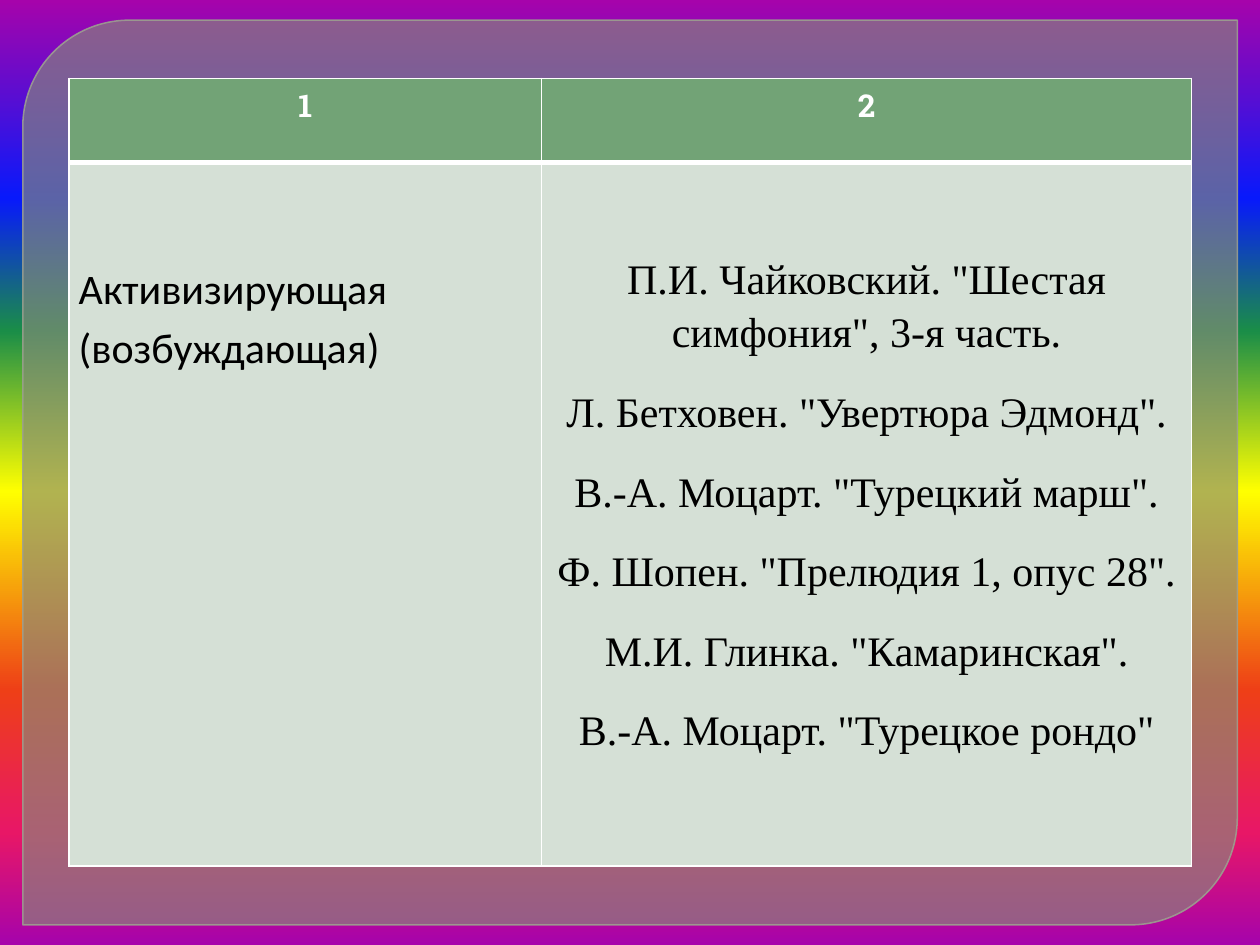
import pptx
import pptx.util
import pptx.dml.color
import pptx.enum.shapes
import pptx.enum.text
import pptx.oxml
import pptx.oxml.ns
import lxml.etree

Pt = pptx.util.Pt
qn = pptx.oxml.ns.qn
CENTER = pptx.enum.text.PP_ALIGN.CENTER
LEFT = pptx.enum.text.PP_ALIGN.LEFT

COLORS = {
    "panel": "888B7B",
    "panel_line": "9DA090",
    "header": "72A376",
    "body": "D5E0D6",
    "white": "FFFFFF",
    "black": "000000",
}
RAINBOW = [(0, "A603AB"), (21, "0819FB"), (35, "1A8D48"), (52, "FFFF00"),
           (73, "EE3F17"), (88, "E81766"), (100, "A603AB")]

HEADER_FONT = {"name": "Roboto Slab", "size": Pt(18), "bold": True}
TYPE_FONT = {"name": "Calibri", "size": Pt(24), "bold": False}
MUSIC_FONT = {"name": "Times New Roman", "size": Pt(24), "bold": False}
HEADER_PARAGRAPH = {"alignment": CENTER}
TYPE_PARAGRAPH = {"alignment": LEFT, "line_spacing": 1.15, "space_after": Pt(15)}
MUSIC_PARAGRAPH = {**TYPE_PARAGRAPH, "alignment": CENTER}

TYPE_TEXT = ["Активизирующая (возбуждающая)"]
MUSIC = [
    "П.И. Чайковский. \"Шестая симфония\", 3-я часть.",
    "Л. Бетховен. \"Увертюра Эдмонд\".",
    "В.-А. Моцарт. \"Турецкий марш\".",
    "Ф. Шопен. \"Прелюдия 1, опус 28\".",
    "М.И. Глинка. \"Камаринская\".",
    "В.-А. Моцарт. \"Турецкое рондо\"",
]


def rgb(name):
    return pptx.dml.color.RGBColor.from_string(COLORS[name])


def apply(target, values):
    for name, value in values.items():
        setattr(target, name, value)


def add_alpha(fill_element, percent):
    color = fill_element.find(qn("a:srgbClr"))
    lxml.etree.SubElement(color, qn("a:alpha"), val=str(percent * 1000))


def paint_background(slide):
    fill = slide.background.fill
    fill.gradient()
    gradient = next(slide.element.iter(qn("a:gradFill")))
    stops = gradient.find(qn("a:gsLst"))
    for stop in list(stops):
        stops.remove(stop)
    for position, color in RAINBOW:
        stop = lxml.etree.SubElement(stops, qn("a:gs"), pos=str(position * 1000))
        lxml.etree.SubElement(stop, qn("a:srgbClr"), val=color)
    gradient.find(qn("a:lin")).set("ang", "5400000")


def add_panel(slide, left, top, width, height):
    kind = pptx.enum.shapes.MSO_SHAPE.ROUND_2_DIAG_RECTANGLE
    panel = slide.shapes.add_shape(kind, Pt(left), Pt(top), Pt(width), Pt(height))
    panel.shadow.inherit = False
    panel.adjustments[0] = 0.118
    panel.adjustments[1] = 0
    panel.fill.solid()
    panel.fill.fore_color.rgb = rgb("panel")
    panel.line.color.rgb = rgb("panel_line")
    panel.line.width = Pt(0.87)
    properties = panel.element.spPr
    add_alpha(properties.find(qn("a:solidFill")), 65)
    add_alpha(properties.find(qn("a:ln")).find(qn("a:solidFill")), 88)


def set_borders(cell, widths):
    properties = cell._tc.get_or_add_tcPr()
    for index, (side, width) in enumerate(widths.items()):
        line = lxml.etree.Element(qn("a:ln" + side), w=str(int(Pt(width))))
        fill = lxml.etree.SubElement(line, qn("a:solidFill"))
        lxml.etree.SubElement(fill, qn("a:srgbClr"), val=COLORS["white"])
        properties.insert(index, line)


def fill_cell(cell, texts, color, fill, font, paragraph_format, margins, borders):
    cell.fill.solid()
    cell.fill.fore_color.rgb = rgb(fill)
    apply(cell, margins)
    set_borders(cell, borders)
    frame = cell.text_frame
    for index, text in enumerate(texts):
        paragraph = frame.add_paragraph() if index else frame.paragraphs[0]
        apply(paragraph, paragraph_format)
        run = paragraph.add_run()
        run.text = text
        apply(run.font, font)
        run.font.color.rgb = rgb(color)


def add_music_table(slide, left, top, width, height):
    header_height, type_width = 48.24, 270
    frame = slide.shapes.add_table(2, 2, Pt(left), Pt(top), Pt(width), Pt(height))
    table = frame.table
    table.columns[0].width = Pt(type_width)
    table.columns[1].width = Pt(width - type_width)
    table.rows[0].height = Pt(header_height)
    table.rows[1].height = Pt(height - header_height)

    header_borders = {"L": 1, "R": 1, "T": 1, "B": 3}
    body_borders = {"L": 1, "R": 1, "T": 3, "B": 1}
    for column, title in enumerate("12"):
        fill_cell(table.cell(0, column), [title], "white", "header",
                  HEADER_FONT, HEADER_PARAGRAPH, {}, header_borders)

    columns = [(TYPE_TEXT, TYPE_FONT, TYPE_PARAGRAPH, 54),
               (MUSIC, MUSIC_FONT, MUSIC_PARAGRAPH, 50)]
    for column, (texts, font, paragraph_format, margin_top) in enumerate(columns):
        margins = {"margin_left": Pt(5.5), "margin_right": Pt(5.5),
                   "margin_top": Pt(margin_top), "margin_bottom": Pt(5)}
        fill_cell(table.cell(1, column), texts, "black", "body",
                  font, paragraph_format, margins, body_borders)


def main():
    presentation = pptx.Presentation()
    presentation.slide_width = Pt(720)
    presentation.slide_height = Pt(540)
    slide = presentation.slides.add_slide(presentation.slide_layouts[6])
    paint_background(slide)
    add_panel(slide, 13, 11.5, 694, 517)
    add_music_table(slide, 39.5, 44.75, 641.5, 450)
    presentation.save("out.pptx")


if __name__ == "__main__":
    main()
